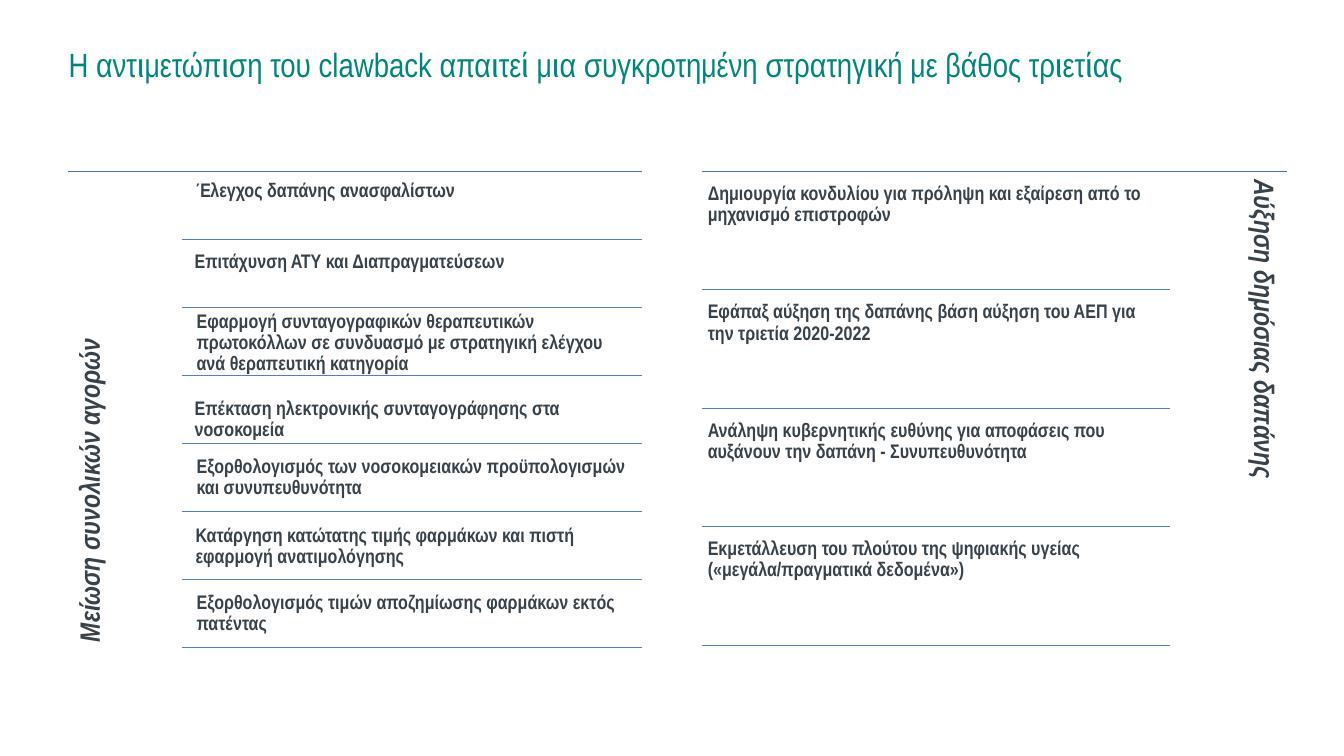
from dataclasses import dataclass

from lxml.etree import SubElement
from pptx import Presentation
from pptx.dml.color import RGBColor
from pptx.enum.shapes import MSO_CONNECTOR
from pptx.enum.text import MSO_ANCHOR, MSO_AUTO_SIZE, PP_ALIGN
from pptx.oxml.ns import qn
from pptx.util import Pt

TITLE = "Η αντιμετώπιση του clawback απαιτεί μια συγκροτημένη στρατηγική με βάθος τριετίας"

# Each measure: left and top of its box in px, then its text.
MARKET_HEADING = "Μείωση συνολικών αγορών"
MARKET_MEASURES = [
    (189, 173, "Έλεγχος δαπάνης ανασφαλίστων"),
    (187, 244, "Επιτάχυνση ΑΤΥ και Διαπραγματεύσεων"),
    (189, 303, "Εφαρμογή συνταγογραφικών θεραπευτικών πρωτοκόλλων σε συνδυασμό "
               "με στρατηγική ελέγχου ανά θεραπευτική κατηγορία"),
    (187, 389, "Επέκταση ηλεκτρονικής συνταγογράφησης στα νοσοκομεία"),
    (189, 447, "Εξορθολογισμός των νοσοκομειακών προϋπολογισμών και συνυπευθυνότητα"),
    (188, 515, "Κατάργηση κατώτατης τιμής φαρμάκων και πιστή εφαρμογή ανατιμολόγησης"),
    (189, 582, "Εξορθολογισμός τιμών αποζημίωσης φαρμάκων εκτός πατέντας"),
]

SPENDING_HEADING = "Αύξηση δημόσιας δαπάνης"
SPENDING_MEASURES = [
    "Δημιουργία κονδυλίου για πρόληψη και εξαίρεση από το μηχανισμό επιστροφών",
    "Εφάπαξ αύξηση της δαπάνης βάση αύξηση του ΑΕΠ για την τριετία 2020-2022",
    "Ανάληψη κυβερνητικής ευθύνης για αποφάσεις που αυξάνουν την δαπάνη - Συνυπευθυνότητα",
    "Εκμετάλλευση του πλούτου της ψηφιακής υγείας («μεγάλα/πραγματικά δεδομένα»)",
]


@dataclass(frozen=True)
class Theme:
    font: str = "Arial Narrow"
    title_color: str = "00877C"
    text_color: str = "37424A"
    top_rule: str = "4875AC"
    row_rule: str = "4F81BD"
    title_size: int = 24
    heading_size: int = 20
    measure_size: int = 14
    rule_width: float = 0.75


THEME = Theme()
EMU_PER_PX = 9144
TOP = 170


def px(length):
    return round(length * EMU_PER_PX)


def place(shape, left, top, width, height):
    shape.left, shape.top = px(left), px(top)
    shape.width, shape.height = px(width), px(height)


def write(shape, text, *, size, color=THEME.text_color, bold=True, italic=False,
          inset=6, spacing=0.9, direction=None):
    frame = shape.text_frame
    frame.word_wrap = True
    frame.auto_size = MSO_AUTO_SIZE.NONE
    frame.vertical_anchor = MSO_ANCHOR.TOP
    frame.margin_left = frame.margin_right = px(inset)
    frame.margin_top = frame.margin_bottom = px(inset)
    if direction:
        shape.element.txBody.bodyPr.set("vert", direction)
    paragraph = frame.paragraphs[0]
    paragraph.alignment = PP_ALIGN.LEFT
    paragraph.line_spacing = spacing
    run = paragraph.add_run()
    run.text = text
    run.font.name = THEME.font
    run.font.size = Pt(size)
    run.font.bold = bold
    run.font.italic = italic
    run.font.color.rgb = RGBColor.from_string(color)


def add_text(slide, box, text, **text_format):
    shape = slide.shapes.add_textbox(*map(px, box))
    write(shape, text, **text_format)


def add_rule(slide, left, right, y, color):
    rule = slide.shapes.add_connector(
        MSO_CONNECTOR.STRAIGHT, px(left), px(y), px(right), px(y))
    rule.line.color.rgb = RGBColor.from_string(color)
    rule.line.width = Pt(THEME.rule_width)
    SubElement(rule.element.spPr, qn("a:effectLst"))


def add_row_rules(slide, left, right, bottom, count):
    """Close each of the equal rows between TOP and bottom with a rule."""
    step = (bottom - TOP) / count
    for row in range(1, count + 1):
        add_rule(slide, left, right, TOP + row * step, THEME.row_rule)


def add_heading(slide, box, text, direction):
    add_text(slide, box, text, size=THEME.heading_size, italic=True,
             inset=8, direction=direction)


def add_market_column(slide):
    add_rule(slide, 67, 637, TOP, THEME.top_rule)
    add_heading(slide, (67, TOP, 114, 475), MARKET_HEADING, "vert270")
    add_row_rules(slide, 181, 637, 642, len(MARKET_MEASURES))
    for left, top, text in MARKET_MEASURES:
        add_text(slide, (left, top, 448, 64), text, size=THEME.measure_size)


def add_spending_column(slide):
    bottom, gap = 640, 6
    step = (bottom - TOP) / len(SPENDING_MEASURES)
    add_rule(slide, 696, 1276, TOP, THEME.top_rule)
    add_heading(slide, (1160, TOP, 116, 476), SPENDING_HEADING, "vert")
    add_row_rules(slide, 696, 1160, bottom, len(SPENDING_MEASURES))
    for row, text in enumerate(SPENDING_MEASURES):
        add_text(slide, (696, TOP + gap + row * step, 455, 112), text,
                 size=THEME.measure_size)


def main():
    presentation = Presentation()
    presentation.slide_width, presentation.slide_height = px(1333), px(750)
    slide = presentation.slides.add_slide(presentation.slide_layouts[5])
    title = slide.shapes.title
    place(title, 68, 44, 1199, 126)
    write(title, TITLE, size=THEME.title_size, color=THEME.title_color,
          bold=False, inset=0, spacing=1.0)
    add_market_column(slide)
    add_spending_column(slide)
    presentation.save("out.pptx")


if __name__ == "__main__":
    main()
